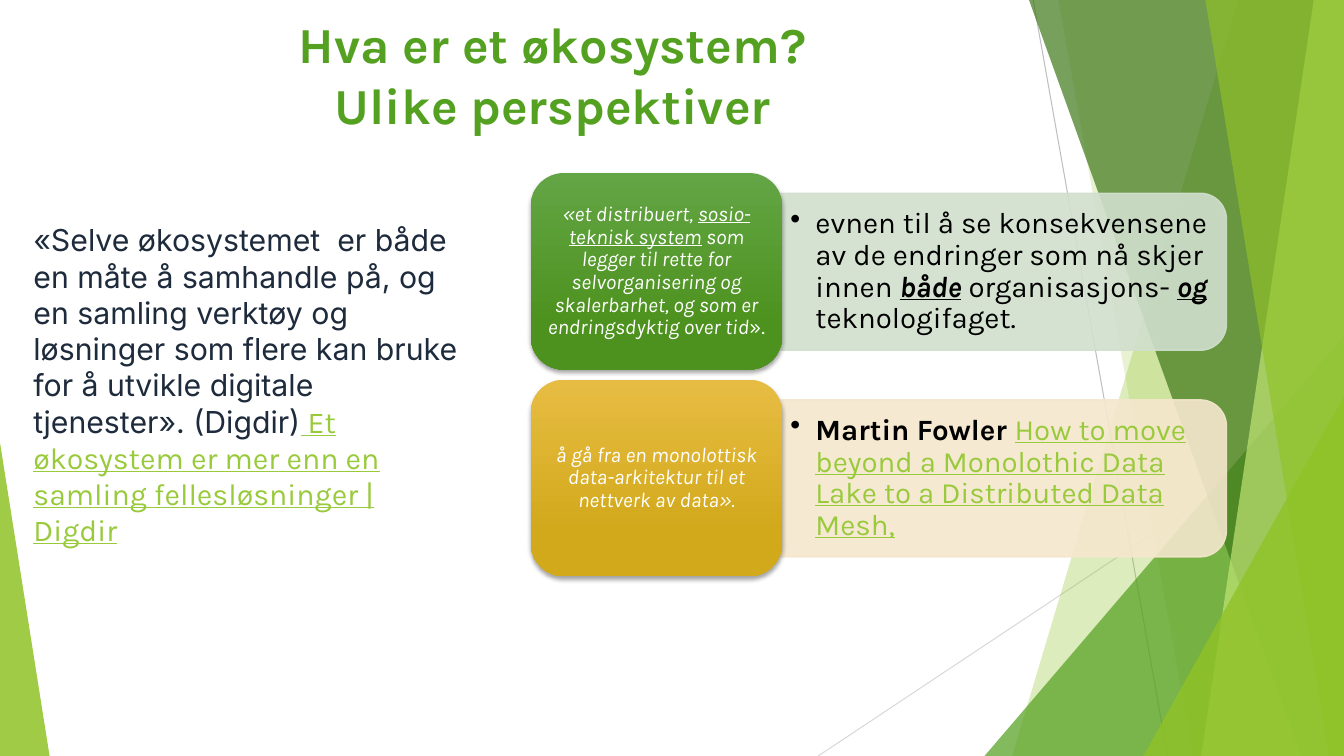
from lxml.etree import SubElement
from pptx import Presentation
from pptx.dml.color import RGBColor
from pptx.enum.shapes import MSO_CONNECTOR, MSO_SHAPE as SHAPE
from pptx.enum.text import MSO_ANCHOR as ANCHOR, PP_ALIGN as ALIGN
from pptx.oxml.ns import qn
from pptx.util import Inches, Pt

COLUMNS, ROWS = 160, 90
LIME, GREEN, FOREST, PALE_LIME = "90C226", "54A021", "3F7819", "C0E474"
LINK = {"color": "99CA3C", "underline": True}
STRESS = {"bold": True, "italic": True, "underline": True}


def rgb(code):
    return RGBColor.from_string(code)


def child(parent, tag, **attributes):
    return SubElement(parent, qn(tag), {k: str(v) for k, v in attributes.items()})


class SlideBuilder:
    """Draws on one slide; all lengths are columns and rows of the grid."""

    def __init__(self, deck, font):
        self.deck, self.font = deck, font
        self.slide = deck.slides.add_slide(deck.slide_layouts[6])

    def x(self, columns):
        return round(self.deck.slide_width * columns / COLUMNS)

    def y(self, rows):
        return round(self.deck.slide_height * rows / ROWS)

    def box(self, left, top, width, height):
        return self.x(left), self.y(top), self.x(width), self.y(height)

    def hairline(self, start, end, color):
        line = self.slide.shapes.add_connector(
            MSO_CONNECTOR.STRAIGHT, self.x(start[0]), self.y(start[1]),
            self.x(end[0]), self.y(end[1]))
        line.line.color.rgb = rgb(color)
        line.line.width = Pt(0.75)
        child(line._element.spPr, "a:effectLst")

    def paint(self, shape, color, opacity, outlined=False):
        shape.shadow.inherit = False
        shape.fill.solid()
        shape.fill.fore_color.rgb = rgb(color)
        if outlined:
            shape.line.color.rgb = rgb(color)
            shape.line.width = Pt(1)
        else:
            shape.line.fill.background()
        for tint in shape._element.spPr.iter(qn("a:srgbClr")):
            child(tint, "a:alpha", val=opacity * 1000)

    def band(self, top_x, bottom_x, color, opacity):
        """Full-height facet between a slanted edge and the right slide edge."""
        outline = self.slide.shapes.build_freeform(self.x(top_x), 0)
        outline.add_line_segments(
            [(self.x(c), self.y(r))
             for c, r in ((COLUMNS, 0), (COLUMNS, ROWS), (bottom_x, ROWS))])
        self.paint(outline.convert_to_shape(), color, opacity)

    def corner(self, left, top, width, apex, color, opacity):
        """Right triangle standing on the bottom edge; apex 0 is left, 1 right."""
        triangle = self.slide.shapes.add_shape(
            SHAPE.ISOSCELES_TRIANGLE, *self.box(left, top, width, ROWS - top))
        triangle.adjustments[0] = apex
        self.paint(triangle, color, opacity)

    def panel(self, left, top, width, height, color):
        """Panel rounded on its right side only."""
        middle_x, middle_y = left + width / 2, top + height / 2
        panel = self.slide.shapes.add_shape(
            SHAPE.ROUND_2_SAME_RECTANGLE,
            *self.box(middle_x - height / 2, middle_y - width / 2, height, width))
        panel.rotation = 90
        self.paint(panel, color, 90, outlined=True)

    def card(self, left, top, width, height, shades, runs):
        card = self.slide.shapes.add_shape(
            SHAPE.ROUNDED_RECTANGLE, *self.box(left, top, width, height))
        card.fill.gradient()
        card.fill.gradient_angle = 270
        for stop, shade, position in zip(card.fill.gradient_stops, shades, (0, 0.78)):
            stop.color.rgb = rgb(shade)
            stop.position = position
        card.line.fill.background()
        card.shadow.inherit = False
        shadow = child(card._element.spPr.find(qn("a:effectLst")), "a:outerShdw",
                       blurRad=Pt(3), dist=Pt(2), dir=90 * 60000, rotWithShape=0)
        child(child(shadow, "a:srgbClr", val="000000"), "a:alpha", val=35000)
        self.set_text(card, [runs], {"size": Pt(15), "color": "FFFFFF", "italic": True},
                      align=ALIGN.CENTER, spacing=0.9, inset=(0.06, 0.03))

    def text(self, left, top, width, height, paragraphs, base, **layout):
        frame = self.slide.shapes.add_textbox(*self.box(left, top, width, height))
        self.set_text(frame, paragraphs, base, **layout)

    def set_text(self, holder, paragraphs, base, align=ALIGN.LEFT, spacing=None,
                 inset=(0.1, 0.05), anchor=ANCHOR.MIDDLE, bullet=None):
        frame = holder.text_frame
        side, edge = map(Inches, inset)
        layout = {"word_wrap": True, "vertical_anchor": anchor,
                  "margin_left": side, "margin_right": side,
                  "margin_top": edge, "margin_bottom": edge}
        for key, value in layout.items():
            setattr(frame, key, value)
        for index, runs in enumerate(paragraphs):
            paragraph = frame.add_paragraph() if index else frame.paragraphs[0]
            paragraph.alignment = align
            paragraph.line_spacing = spacing
            if bullet:
                properties = paragraph._p.get_or_add_pPr()
                properties.set("marL", str(Inches(0.25)))
                properties.set("indent", str(-Inches(0.25)))
                child(properties, "a:buChar", char=bullet)
            for words, changes in runs:
                run = paragraph.add_run()
                run.text = words
                style = {"name": self.font, **base, **changes}
                run.font.color.rgb = rgb(style.pop("color"))
                for key, value in style.items():
                    setattr(run.font, key, value)


def draw_backdrop(page):
    page.hairline((123, 0), (139, ROWS), "BFBFBF")
    page.hairline((COLUMNS, 48.4), (97.4, ROWS), "D9D9D9")
    page.band(147.4, 120.5, LIME, 30)
    page.band(126, 142, LIME, 20)
    page.corner(117.2, 40, 42.8, 1, GREEN, 72)
    page.band(122.5, 154.9, FOREST, 70)
    page.band(156.4, 143, PALE_LIME, 70)
    page.band(143.5, 158.2, LIME, 65)
    page.corner(136.1, 47.2, 23.9, 1, LIME, 80)
    page.corner(0, 52.7, 5.9, 0, LIME, 85)


PERSPECTIVES = [
    {"shades": ("63A545", "4D921E"), "panel": "D1DFCD",
     "quote": [("«et distribuert, ", {}),
               ("sosio-teknisk system", {"underline": True}),
               (" som legger til rette for selvorganisering og skalerbarhet, "
                "og som er endringsdyktig over tid", {}),
               ("».", {"italic": False})],
     "comment": [("evnen til å se konsekvensene av de endringer som nå skjer innen ", {}),
                 ("både", STRESS), (" organisasjons- ", {}),
                 ("og", STRESS), (" teknologifaget.", {})]},
    {"shades": ("E7BC43", "D2A91B"), "panel": "F5E7CD",
     "quote": [("å gå fra en monolottisk data-arkitektur til et nettverk av data».", {})],
     "comment": [("Martin Fowler ", {"bold": True}),
                 ("How to move beyond a Monolothic Data Lake to a "
                  "Distributed Data Mesh,", LINK)]},
]


def main():
    deck = Presentation()
    deck.slide_width, deck.slide_height = Inches(13.33), Inches(7.5)
    page = SlideBuilder(deck, "Karla")
    draw_backdrop(page)

    definition = [
        ("«Selve økosystemet  er både en måte å samhandle på, og en samling verktøy "
         "og løsninger som flere kan bruke for å utvikle digitale tjenester». (Digdir)",
         {"name": "Inter"}),
        (" Et økosystem er mer enn en samling fellesløsninger | Digdir", LINK)]
    page.text(2.8, 24.5, 52.9, 42.6, [definition],
              {"size": Pt(21.6), "color": "1E2B3C"})

    for row, view in enumerate(PERSPECTIVES):
        top = 20.6 + 24.6 * row
        page.panel(93, top + 2.4, 53, 18.7, view["panel"])
        page.text(93, top + 3.3, 52.1, 16.9, [view["comment"]],
                  {"size": Pt(21), "color": "000000"},
                  spacing=0.9, inset=(0.09, 0.04), bullet="•")
        page.card(63.2, top, 29.9, 23.4, view["shades"], view["quote"])

    heading = ["Hva er et økosystem?", "Ulike perspektiver"]
    page.text(25.8, 1, 80, 16, [[(line, {})] for line in heading],
              {"size": Pt(36), "color": GREEN, "bold": True},
              align=ALIGN.CENTER, anchor=ANCHOR.TOP)
    deck.save("out.pptx")


if __name__ == "__main__":
    main()
